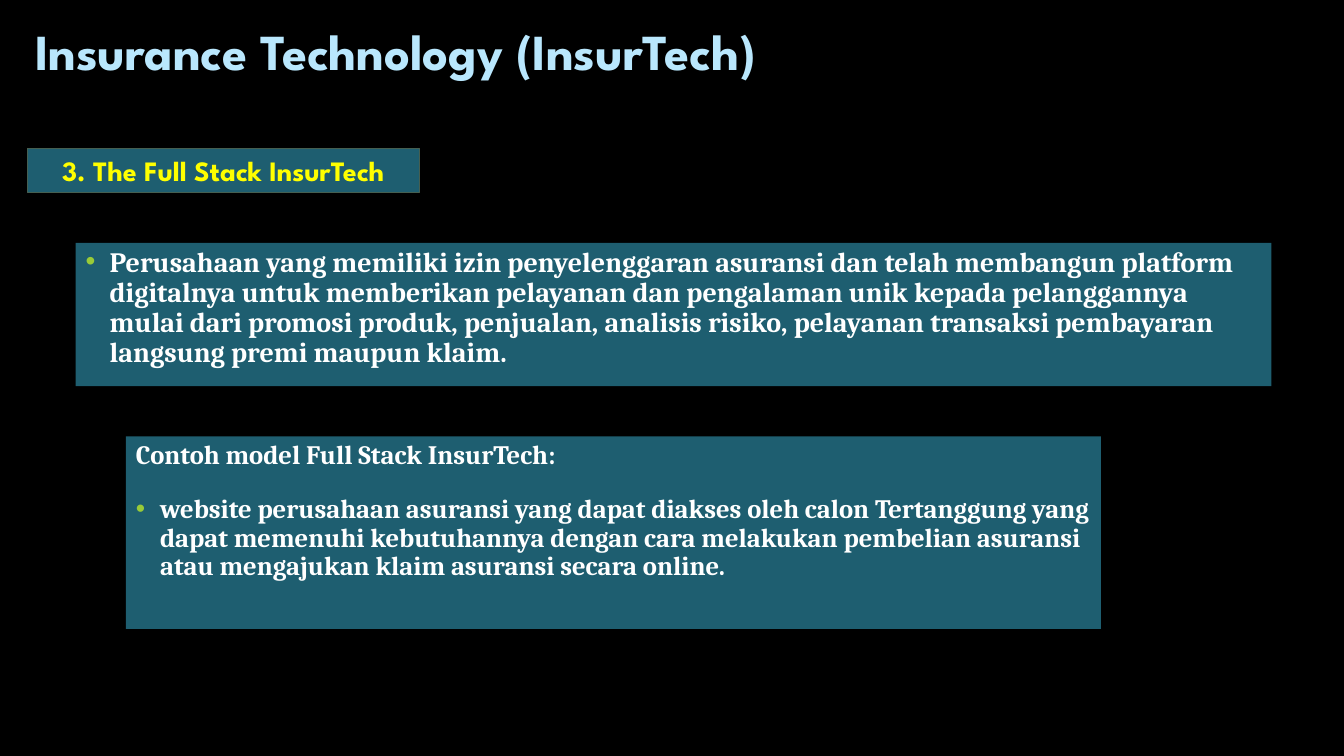
from dataclasses import dataclass

from lxml.etree import SubElement
from pptx import Presentation
from pptx.dml.color import RGBColor
from pptx.enum.shapes import MSO_SHAPE
from pptx.enum.text import MSO_ANCHOR, PP_ALIGN
from pptx.oxml.ns import qn
from pptx.util import Inches, Pt


@dataclass(frozen=True)
class Theme:
    background: str = "000000"
    panel: str = "1E5E70"
    outline: str = "455F51"
    title: str = "B9E7FD"
    heading: str = "FFFF00"
    body: str = "FFFFFF"
    bullet: str = "99CB38"
    display_font: str = "League Spartan"
    body_font: str = "Cambria"
    title_size: int = 36
    text_size: int = 20
    example_size: int = 19


theme = Theme()


def add_panel(left, top, width, height, anchor):
    panel = slide.shapes.add_shape(
        MSO_SHAPE.RECTANGLE, Inches(left), Inches(top), Inches(width), Inches(height))
    panel.shadow.inherit = False
    panel.fill.solid()
    panel.fill.fore_color.rgb = RGBColor.from_string(theme.panel)
    panel.line.fill.background()
    panel.text_frame.word_wrap = True
    panel.text_frame.vertical_anchor = anchor
    return panel


def write(para, text, font_name, size, color, align=PP_ALIGN.LEFT, spacing=0.9, bulleted=False):
    para.text = text
    para.alignment = align
    if bulleted:
        properties = para._p.get_or_add_pPr()
        properties.set("marL", str(Inches(0.24)))
        properties.set("indent", str(Inches(-0.24)))
        bullet_color = SubElement(properties, qn("a:buClr"))
        SubElement(bullet_color, qn("a:srgbClr"), val=theme.bullet)
        SubElement(properties, qn("a:buFont"), typeface="Arial")
        SubElement(properties, qn("a:buChar"), char="•")
    para.line_spacing = spacing
    para.font.name = font_name
    para.font.size = Pt(size)
    para.font.bold = True
    para.font.color.rgb = RGBColor.from_string(color)


deck = Presentation()
deck.slide_width = Inches(13.33)
deck.slide_height = Inches(7.5)
slide = deck.slides.add_slide(deck.slide_layouts[6])
slide.background.fill.solid()
slide.background.fill.fore_color.rgb = RGBColor.from_string(theme.background)

title_box = slide.shapes.add_textbox(Inches(0.25), Inches(0.12), Inches(11.33), Inches(0.74))
title_box.text_frame.word_wrap = True
title_box.text_frame.vertical_anchor = MSO_ANCHOR.BOTTOM
write(title_box.text_frame.paragraphs[0], "Insurance Technology (InsurTech)",
      theme.display_font, theme.title_size, theme.title)

heading_panel = add_panel(0.27, 1.47, 3.89, 0.44, MSO_ANCHOR.MIDDLE)
heading_panel.line.color.rgb = RGBColor.from_string(theme.outline)
heading_panel.line.width = Pt(0.75)
write(heading_panel.text_frame.paragraphs[0], "3. The Full Stack InsurTech",
      theme.display_font, theme.text_size, theme.heading, PP_ALIGN.CENTER, 1.0)

definition_panel = add_panel(0.75, 2.41, 11.86, 1.42, MSO_ANCHOR.TOP)
write(definition_panel.text_frame.paragraphs[0],
      "Perusahaan yang memiliki izin penyelenggaran asuransi dan telah membangun platform "
      "digitalnya untuk memberikan pelayanan dan pengalaman unik kepada pelanggannya mulai "
      "dari promosi produk, penjualan, analisis risiko, pelayanan transaksi pembayaran "
      "langsung premi maupun klaim.",
      theme.body_font, theme.text_size, theme.body, bulleted=True)

example_panel = add_panel(1.25, 4.33, 9.67, 1.91, MSO_ANCHOR.TOP)
write(example_panel.text_frame.paragraphs[0], "Contoh model Full Stack InsurTech:",
      theme.body_font, theme.example_size, theme.body)
example_para = example_panel.text_frame.add_paragraph()
write(example_para,
      "website perusahaan asuransi yang dapat diakses oleh calon Tertanggung yang dapat "
      "memenuhi kebutuhannya dengan cara melakukan pembelian asuransi atau mengajukan "
      "klaim asuransi secara online.",
      theme.body_font, theme.example_size, theme.body, bulleted=True)
example_para.space_before = Pt(18)

deck.save("out.pptx")
